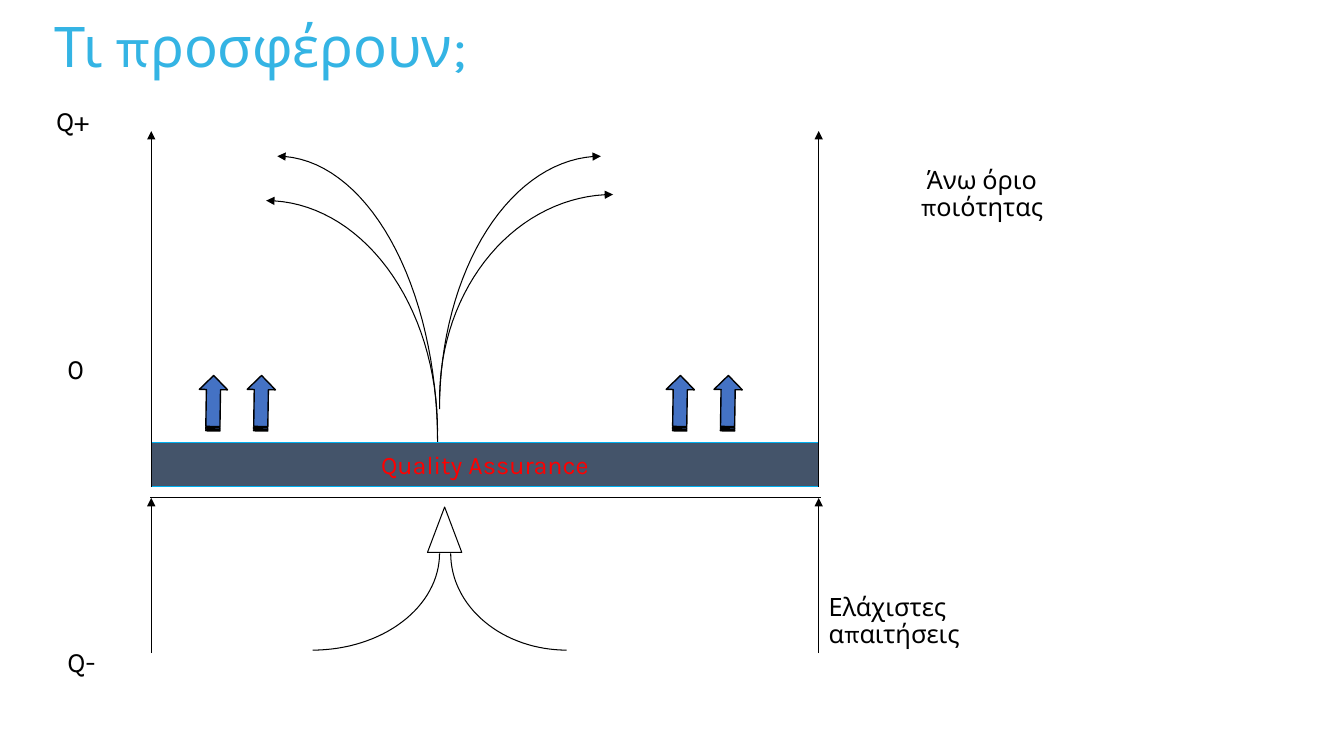
from math import cos, pi, sin

from lxml.etree import SubElement
from pptx import Presentation
from pptx.dml.color import RGBColor
from pptx.enum.shapes import MSO_CONNECTOR as Link, MSO_SHAPE as Form
from pptx.enum.text import MSO_ANCHOR as Anchor, PP_ALIGN as Align
from pptx.oxml.ns import qn
from pptx.util import Inches, Pt

THEME = {
    "font": "Karla",
    "title": "34B4E4", "ink": "000000", "bar": "44546A",
    "edge": "00B0F0", "alert": "FF0000", "lift": "4472C4",
    "head": 40, "scale": 20, "label": 18,
    "thin": 0.75, "bold": 1,
}

TITLE = "Τι προσφέρουν;"
MARKS = [("Q+", 0.46, 0.98), ("Q-", 0.57, 6.34), ("0", 0.57, 3.44)]
NOTES = [
    ("Άνω όριο ποιότητας", (8.94, 1.58, 1.6, 0.7), Align.CENTER, Anchor.MIDDLE),
    ("Ελάχιστες απαιτήσεις", (8.12, 5.85, 1.6, 0.7), Align.LEFT, Anchor.TOP),
]
BAR = ("Quality Assurance", (1.5, 4.39, 6.62, 0.44))
SIDES = (1.5, 8.12)
RISES = [(4.83, 1.3), (6.48, 4.94)]
BASE = ((1.49, 4.94), (8.14, 4.94))
INLETS = [((5.62, 6.45), (4.47, 5.49)), ((3.1, 6.45), (4.36, 5.49))]
SPRAYS = [
    ((6.08, 1.93), (4.36, 3.96)),
    ((5.96, 1.55), (4.36, 4.06)),
    ((2.64, 1.99), (4.34, 4.28)),
    ((2.75, 1.55), (4.34, 4.39)),
]
PEAK = (4.24, 5.03, 0.34, 0.45)
PAIRS, STEP, LIFT = (1.84, 6.47), 0.475, (3.86, 0.55, 0.28)
TURN, PARTS = 270.9, 32

deck = Presentation()
deck.slide_width, deck.slide_height = Inches(13.33), Inches(7.5)
slide = deck.slides.add_slide(deck.slide_layouts[5])
shapes = slide.shapes


def tint(name):
    return RGBColor.from_string(THEME[name])


def box(spot):
    return [Inches(n) for n in spot]


def write(shape, text, size="label", color="ink", align=Align.LEFT,
          anchor=Anchor.TOP, wrap=True, space=None):
    frame = shape.text_frame
    frame.word_wrap, frame.vertical_anchor = wrap, anchor
    para = frame.paragraphs[0]
    para.text, para.alignment = text, align
    para.line_spacing = space
    para.font.name, para.font.size = THEME["font"], Pt(THEME[size])
    para.font.color.rgb = tint(color)


def paint(shape, fill=None, edge="ink", width="thin"):
    shape.shadow.inherit = False
    if fill:
        shape.fill.solid()
        shape.fill.fore_color.rgb = tint(fill)
    else:
        shape.fill.background()
    shape.line.color.rgb = tint(edge)
    shape.line.width = Pt(THEME[width])


def tip(shape, end):
    line = shape.line._get_or_add_ln()
    SubElement(line, qn("a:" + end), type="triangle")


def rule(start, stop, arrow=False):
    line = shapes.add_connector(Link.STRAIGHT, *box(start + stop))
    line.line.color.rgb = tint("ink")
    line.line.width = Pt(THEME["thin"])
    if arrow:
        tip(line, "tailEnd")
    SubElement(line._element.spPr, qn("a:effectLst"))


def bend(start, stop, arrow=False):
    (left, top), (foot, base) = start, stop
    turns = [n * pi / 2 / PARTS for n in range(PARTS + 1)]
    dots = [(Inches(left + (foot - left) * sin(t)),
             Inches(base + (top - base) * cos(t))) for t in turns]
    path = shapes.build_freeform(*dots[0])
    path.add_line_segments(dots[1:], close=False)
    curve = path.convert_to_shape()
    paint(curve)
    if arrow:
        tip(curve, "headEnd")


def main():
    title = shapes.title
    title.left, title.top, title.width, title.height = box((0.44, 0, 12.44, 0.98))
    write(title, TITLE, size="head", color="title", anchor=Anchor.MIDDLE, space=0.9)

    rule(*BASE)
    for text, left, top in MARKS:
        write(shapes.add_textbox(*box((left, top, 0.8, 0.44))), text, size="scale")
    for start, stop in INLETS:
        bend(start, stop)
    peak = shapes.add_shape(Form.ISOSCELES_TRIANGLE, *box(PEAK))
    paint(peak)
    for start, stop in SPRAYS:
        bend(start, stop, arrow=True)

    text, spot = BAR
    bar = shapes.add_shape(Form.RECTANGLE, *box(spot))
    paint(bar, fill="bar", edge="edge")
    write(bar, text, color="alert", align=Align.CENTER, anchor=Anchor.MIDDLE, wrap=False)
    for side in SIDES:
        for low, high in RISES:
            rule((side, low), (side, high), arrow=True)
    for text, spot, align, anchor in NOTES:
        write(shapes.add_textbox(*box(spot)), text, align=align, anchor=anchor, space=0.9)

    top, wide, tall = LIFT
    for left in PAIRS:
        for n in range(2):
            spot = (left + n * STEP, top, wide, tall)
            lift = shapes.add_shape(Form.STRIPED_RIGHT_ARROW, *box(spot))
            lift.rotation = TURN
            paint(lift, fill="lift", width="bold")

    deck.save("out.pptx")


if __name__ == "__main__":
    main()
